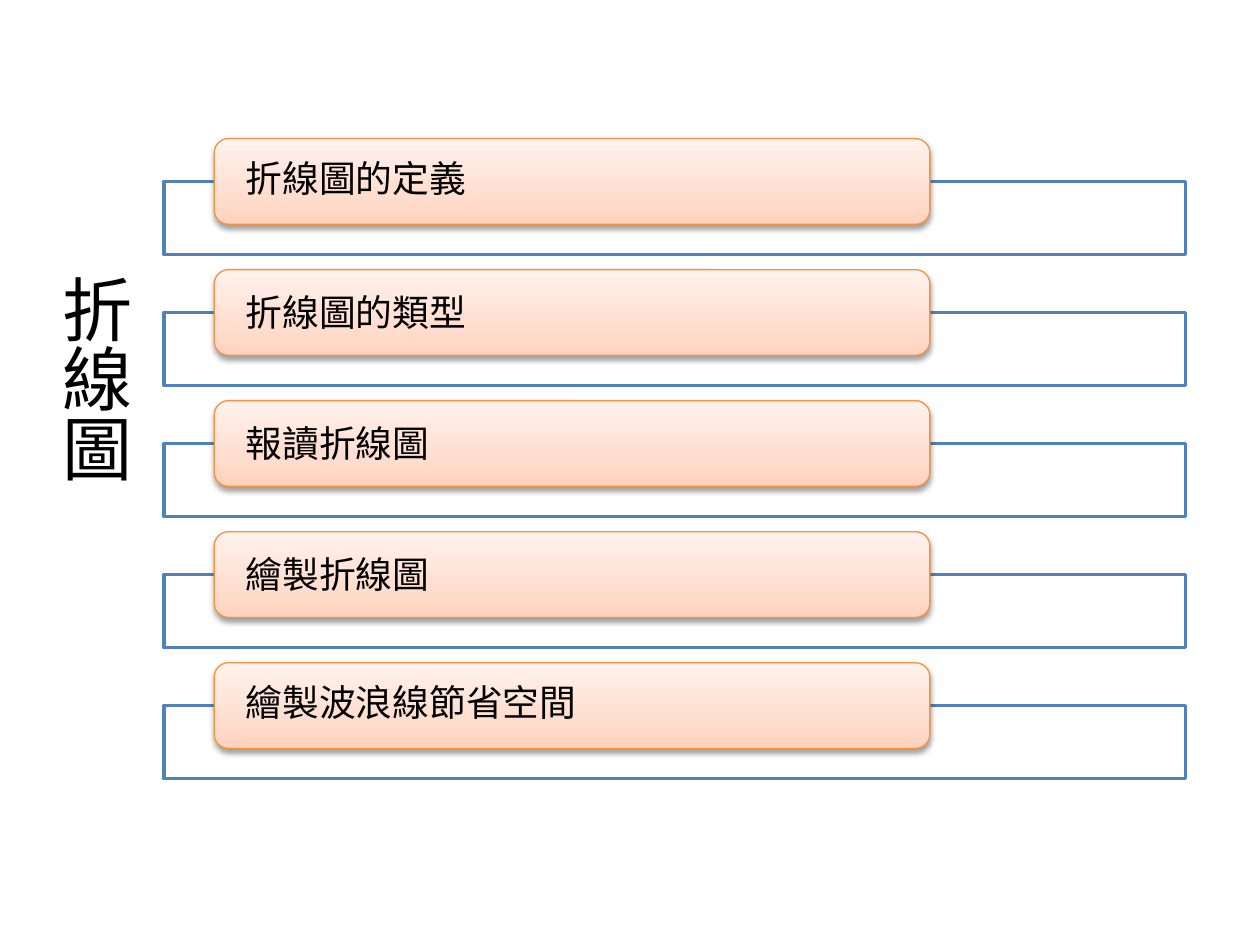
from lxml import etree
from pptx import Presentation
from pptx import util as u
from pptx.dml.color import RGBColor
from pptx.enum import shapes, text
from pptx.oxml import ns

COLORS = {
    "frame": "4F81BD",
    "panel": "FFFFFF",
    "border": "F69240",
    "text": "000000",
    "shadow": "000000",
}
TAB_STOPS = [(0, "FFD2BD"), (35, "FFDED0"), (100, "FFF2ED")]
TOPICS = ["折線圖的定義", "折線圖的類型", "報讀折線圖", "繪製折線圖", "繪製波浪線節省空間"]
SPACED_TOPICS = {0, 4}
TOP, PITCH = 1.1, 1.04


def add_xml(parent, tag, **attrs):
    return etree.SubElement(parent, ns.qn(tag), {k: str(v) for k, v in attrs.items()})


def add_color(parent, color, alpha=None):
    node = add_xml(parent, "a:srgbClr", val=color)
    if alpha is not None:
        add_xml(node, "a:alpha", val=alpha * 1000)


def write(tf, content, size, font="Calibri", color="text", line_spacing=None, space_after=None):
    p = tf.paragraphs[0]
    p.line_spacing = line_spacing
    p.space_after = space_after
    r = p.add_run()
    r.text = content
    r.font.size = u.Pt(size)
    r.font.name = font
    r.font.color.rgb = RGBColor.from_string(COLORS[color])


class ListSlide:
    """Holds the current slide, the group for its list, and the list style."""

    def __init__(self, prs):
        self.s = prs.slides.add_slide(prs.slide_layouts[6])
        self.group = self.s.shapes.add_group_shape()

    def box(self, kind, at, line, width):
        sp = self.group.shapes.add_shape(kind, *map(u.Inches, at))
        sp.shadow.inherit = False
        sp.line.color.rgb = RGBColor.from_string(COLORS[line])
        sp.line.width = u.Pt(width)
        return sp

    def frame(self, *at):
        sp = self.box(shapes.MSO_SHAPE.RECTANGLE, at, "frame", 2)
        sp.fill.solid()
        sp.fill.fore_color.rgb = RGBColor.from_string(COLORS["panel"])
        color = sp.element.spPr.find(ns.qn("a:solidFill"))[0]
        add_xml(color, "a:alpha", val=90000)

    def tab(self, *at):
        """Rounded bar with a three-stop gradient and a soft shadow below."""
        sp = self.box(shapes.MSO_SHAPE.ROUNDED_RECTANGLE, at, "border", 0.75)
        sp.fill.gradient()
        sp.fill.gradient_angle = 90
        stops = sp.element.spPr.find(ns.qn("a:gradFill")).find(ns.qn("a:gsLst"))
        for old in list(stops):
            stops.remove(old)
        for pos, color in TAB_STOPS:
            add_color(add_xml(stops, "a:gs", pos=pos * 1000), color)
        effects = sp.element.spPr.find(ns.qn("a:effectLst"))
        shadow = add_xml(effects, "a:outerShdw", blurRad=u.Pt(3.1), dist=u.Pt(1.6),
                         dir=90 * 60000, rotWithShape=0)
        add_color(shadow, COLORS["shadow"], 38)

    def label(self, content, *at, **style):
        tf = self.group.shapes.add_textbox(*map(u.Inches, at)).text_frame
        tf.word_wrap = True
        tf.vertical_anchor = text.MSO_ANCHOR.MIDDLE
        tf.margin_left = tf.margin_right = u.Inches(0.21)
        tf.margin_top = tf.margin_bottom = 0
        write(tf, content, 21, **style)

    def vertical_title(self, content, *at):
        sp = self.s.shapes.add_textbox(*map(u.Inches, at))
        tf = sp.text_frame
        tf.word_wrap = True
        tf.auto_size = text.MSO_AUTO_SIZE.SHAPE_TO_FIT_TEXT
        sp.element.txBody.bodyPr.set("vert", "eaVert")
        write(tf, content, 40)


def main():
    prs = Presentation()
    prs.slide_width, prs.slide_height = u.Inches(10), u.Inches(7.5)
    page = ListSlide(prs)
    for i, topic in enumerate(TOPICS):
        y = TOP + i * PITCH
        style = {"line_spacing": 0.9, "space_after": u.Pt(7.35)} if i in SPACED_TOPICS else {}
        page.frame(1.3, y + 0.34, 8.11, 0.58)
        page.tab(1.7, y, 5.68, 0.68)
        page.label(topic, 1.74, y + 0.03, 5.61, 0.61, **style)
    page.vertical_title("折線圖", 0.26, 2.08, 0.88, 3.47)
    prs.save("out.pptx")


if __name__ == "__main__":
    main()
